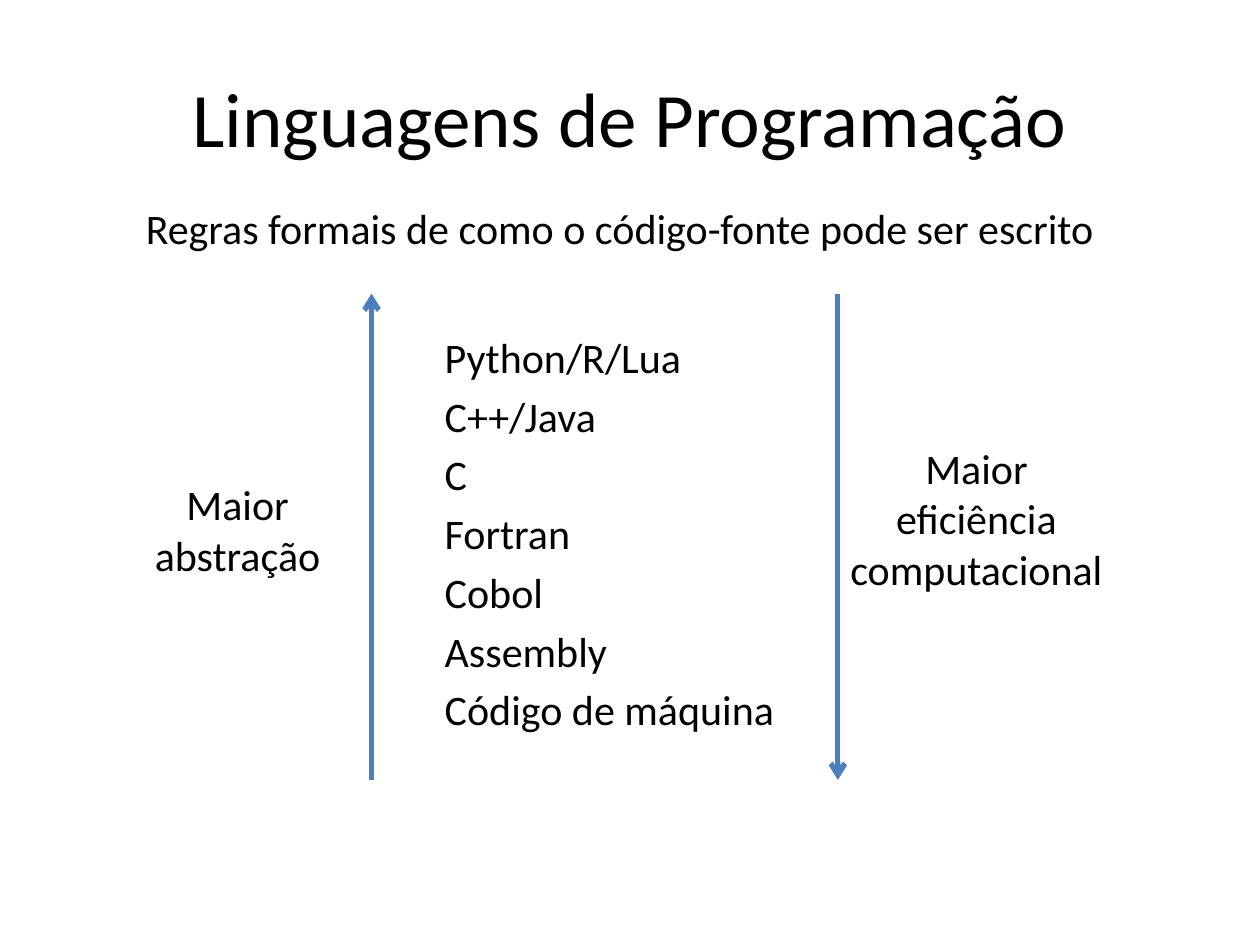
from lxml.etree import SubElement
from pptx import Presentation
from pptx.dml.color import RGBColor
from pptx.enum.shapes import MSO_CONNECTOR
from pptx.enum.text import MSO_ANCHOR, MSO_AUTO_SIZE, PP_ALIGN
from pptx.oxml.ns import qn
from pptx.util import Cm, Pt

BLACK = RGBColor(0x00, 0x00, 0x00)
BLUE = RGBColor(0x4B, 0x7E, 0xBC)
FONT = {"name": "Calibri", "size": Pt(24)}
LANGS = ["Python/R/Lua", "C++/Java", "C", "Fortran", "Cobol", "Assembly",
         "Código de máquina"]


def style(item, form):
    for key, value in form.items():
        setattr(item, key, value)


def place(shape, x, y, w, h):
    style(shape, {"left": Cm(x), "top": Cm(y), "width": Cm(w), "height": Cm(h)})


def write(frame, lines, font=FONT, **form):
    frame.text = "\n".join(lines)
    for par in frame.paragraphs:
        style(par, form)
        for run in par.runs:
            style(run.font, font)
            run.font.color.rgb = BLACK


def label(slide, box, lines, **form):
    frame = slide.shapes.add_textbox(*map(Cm, box)).text_frame
    style(frame, {"word_wrap": True, "auto_size": MSO_AUTO_SIZE.SHAPE_TO_FIT_TEXT})
    write(frame, lines, **form)


def arrow(slide, x, start, end):
    line = slide.shapes.add_connector(
        MSO_CONNECTOR.STRAIGHT, Cm(x), Cm(start), Cm(x), Cm(end))
    line.line.color.rgb = BLUE
    line.line.width = Pt(3)
    SubElement(line.line._get_or_add_ln(), qn("a:tailEnd"), type="arrow")
    SubElement(line._element.spPr, qn("a:effectLst"))


def header(slide, x, y, w):
    # Title
    title = slide.shapes.title
    place(title, x, y, w, 3.18)
    title.text_frame.vertical_anchor = MSO_ANCHOR.MIDDLE
    write(title.text_frame, ["Linguagens de Programação"],
          {**FONT, "size": Pt(44)}, alignment=PP_ALIGN.CENTER)
    # Definition
    label(slide, (x + 1.42, y + 3.2, w - 0.46, 1.27),
          ["Regras formais de como o código-fonte pode ser escrito"],
          space_before=Pt(5))


def scale(slide, x, y, w, h):
    # Languages, from most abstract to most efficient
    body = slide.placeholders[1]
    place(body, x + 1.22, y + 0.63, w - 1.81, h - 0.22)
    write(body.text_frame, LANGS)
    for par in body.text_frame.paragraphs:
        props = par._p.get_or_add_pPr()
        style_none = {"marL": "0", "indent": "0"}
        for key, value in style_none.items():
            props.set(key, value)
        SubElement(props, qn("a:buNone"))
    # Arrows on both sides
    arrow(slide, x, y + h, y)
    arrow(slide, x + w, y, y + h)
    # Meaning of each arrow
    label(slide, (x - 5, y + 3.61, 4.6, 2.31), ["Maior abstração"],
          alignment=PP_ALIGN.CENTER)
    label(slide, (x + w, y + 2.87, 5.59, 3.33),
          ["Maior eficiência", "computacional"], alignment=PP_ALIGN.CENTER)


def main():
    deck = Presentation()
    style(deck, {"slide_width": Cm(25.4), "slide_height": Cm(19.05)})
    slide = deck.slides.add_slide(deck.slide_layouts[1])
    header(slide, 1.27, 0.76, 22.86)
    scale(slide, 7.49, 5.92, 9.4, 9.8)
    deck.save("out.pptx")


if __name__ == "__main__":
    main()
